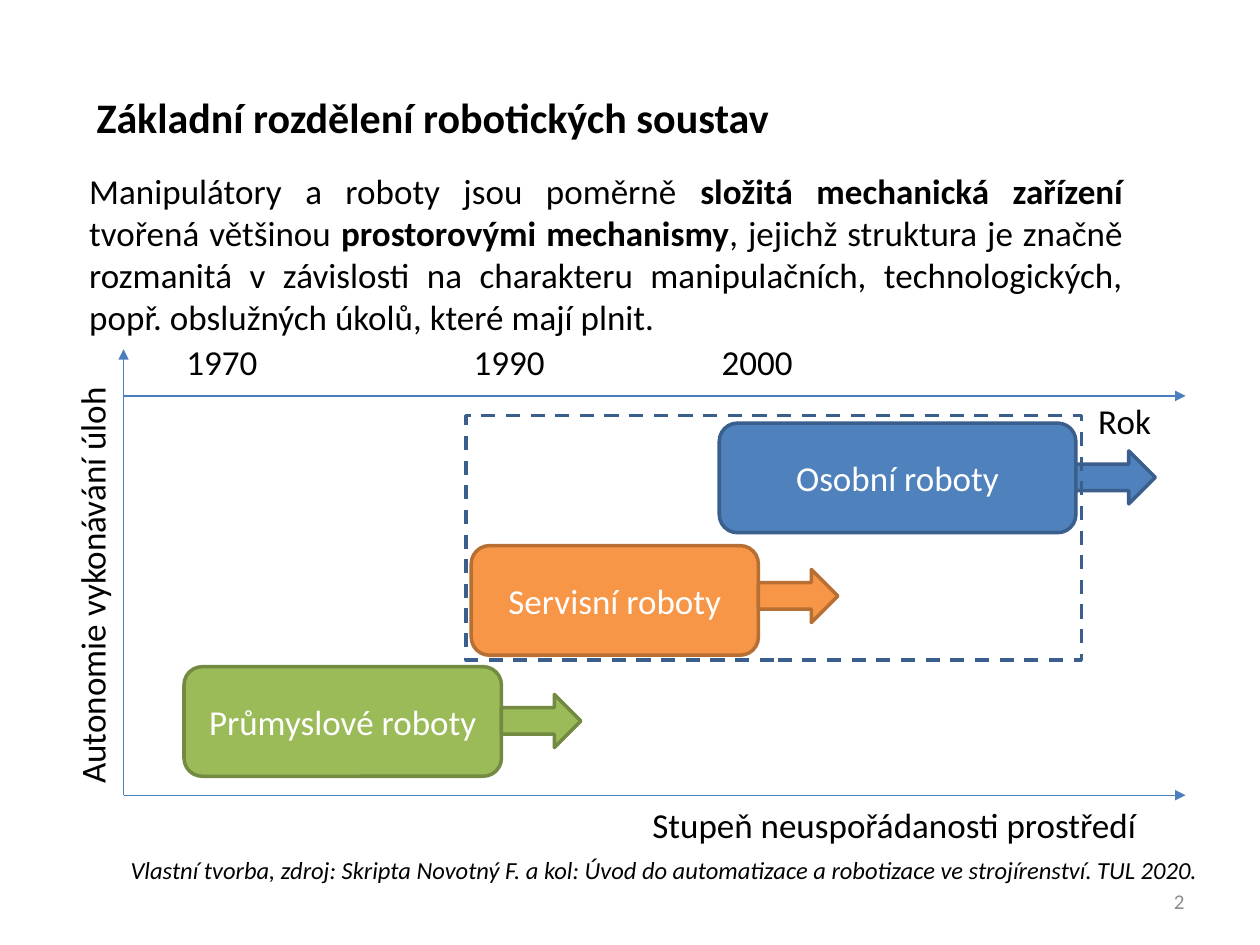
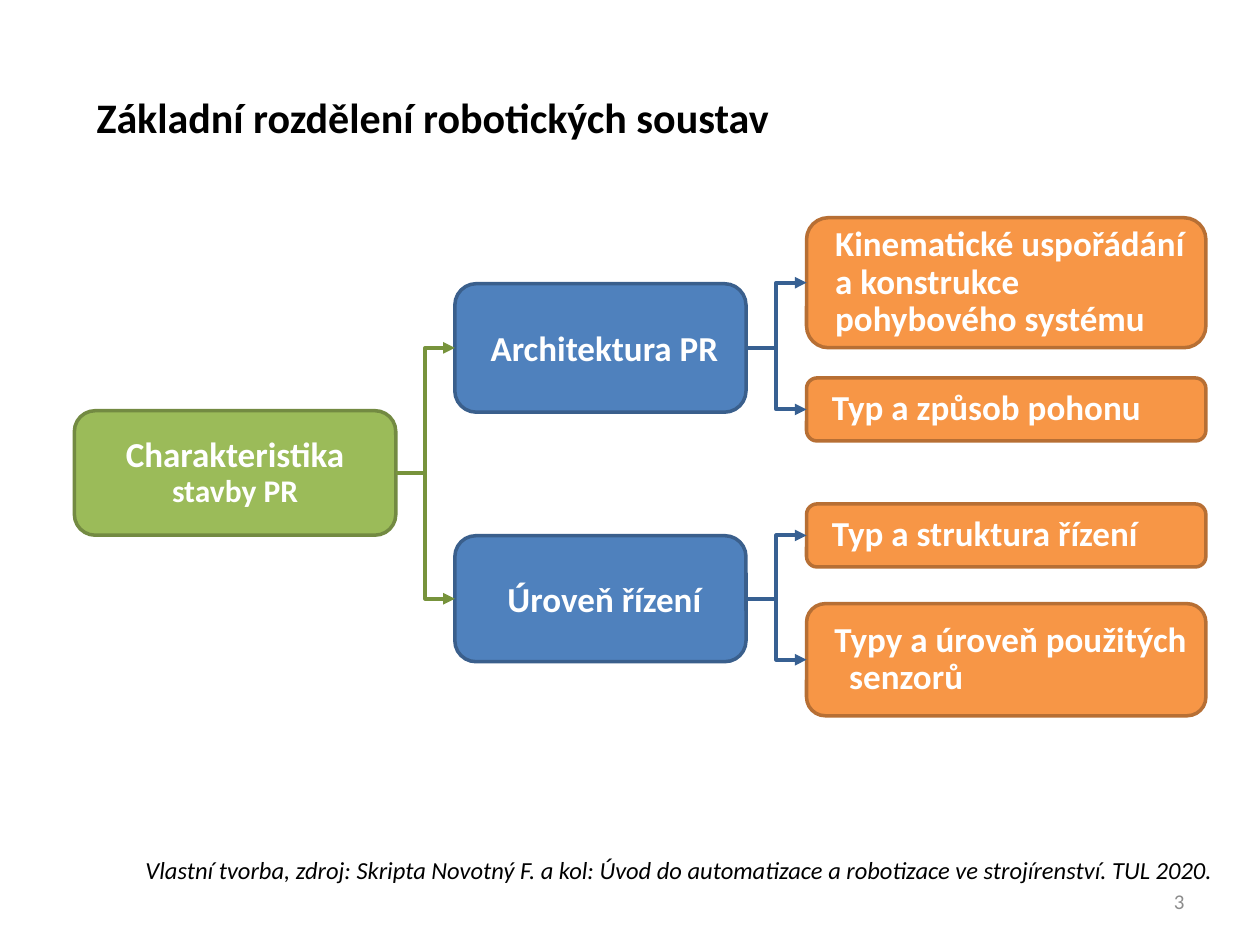
from lxml import etree
from pptx import Presentation
from pptx.dml.color import RGBColor
from pptx.enum.dml import MSO_LINE
from pptx.enum.shapes import MSO_CONNECTOR, MSO_SHAPE
from pptx.enum.text import MSO_ANCHOR, PP_ALIGN
from pptx.oxml.ns import qn
from pptx.util import Cm, Pt

LEFT, CENTER, RIGHT, JUSTIFY = PP_ALIGN.LEFT, PP_ALIGN.CENTER, PP_ALIGN.RIGHT, PP_ALIGN.JUSTIFY
TOP, MIDDLE = MSO_ANCHOR.TOP, MSO_ANCHOR.MIDDLE
RECT, ROUND_RECT = MSO_SHAPE.RECTANGLE, MSO_SHAPE.ROUNDED_RECTANGLE
RIGHT_ARROW = MSO_SHAPE.RIGHT_ARROW
STRAIGHT, ELBOW = MSO_CONNECTOR.STRAIGHT, MSO_CONNECTOR.ELBOW
DASH = MSO_LINE.DASH
LEFT_SIDE, RIGHT_SIDE = 1, 3

FONT = "Calibri"
BLACK, WHITE, GREY = "000000", "FFFFFF", "8C8C8C"
AXIS = "4B7EBC"
GREEN = ("9BBB59", "738A42")
ORANGE = ("F79646", "B76F34")
BLUE = ("4F81BD", "3A5F8C")
GREEN_LINK, BLUE_LINK = "77933C", "376092"

TITLE = "Základní rozdělení robotických soustav"
SOURCE = ("Vlastní tvorba, zdroj: Skripta Novotný F. a kol: Úvod do automatizace "
          "a robotizace ve strojírenství. TUL 2020.")


def rgb(color):
    return RGBColor.from_string(color)


def set_text(shape, runs, size=20, color=BLACK, bold=False, italic=False, align=LEFT,
             anchor=TOP, spacing=None, left=0, first=0):
    tf = shape.text_frame
    tf.word_wrap = True
    tf.vertical_anchor = anchor
    p = tf.paragraphs[0]
    p.alignment = align
    if spacing:
        p.line_spacing = spacing
    if left:
        pPr = p._p.get_or_add_pPr()
        pPr.set("marL", str(Cm(left)))
        pPr.set("indent", str(Cm(first)))
    if isinstance(runs, str):
        runs = [(runs, {})]
    for text, fmt in runs:
        r = p.add_run()
        r.text = text
        r.font.name = FONT
        r.font.size = Pt(fmt.get("size", size))
        r.font.bold = fmt.get("bold", bold)
        r.font.italic = italic
        r.font.color.rgb = rgb(color)


def add_label(s, runs, x, y, w, h=1.11, rotation=0, **fmt):
    sp = s.shapes.add_textbox(Cm(x), Cm(y), Cm(w), Cm(h))
    sp.rotation = rotation
    set_text(sp, runs, **fmt)


def add_figure(s, kind, x, y, w, h, fill, line):
    sp = s.shapes.add_shape(kind, Cm(x), Cm(y), Cm(w), Cm(h))
    sp.shadow.inherit = False
    if fill:
        sp.fill.solid()
        sp.fill.fore_color.rgb = rgb(fill)
    else:
        sp.fill.background()
    sp.line.color.rgb = rgb(line)
    sp.line.width = Pt(2)
    return sp


def add_box(s, runs, x, y, w, h, colors, **fmt):
    sp = add_figure(s, ROUND_RECT, x, y, w, h, *colors)
    set_text(sp, runs, color=WHITE, anchor=MIDDLE, **fmt)
    return sp


def add_arrow(s, kind, x1, y1, x2, y2, color, width):
    c = s.shapes.add_connector(kind, x1, y1, x2, y2)
    c.line.color.rgb = rgb(color)
    c.line.width = Pt(width)
    spPr = c._element.spPr
    etree.SubElement(spPr.find(qn("a:ln")), qn("a:tailEnd"), type="triangle")
    etree.SubElement(spPr, qn("a:effectLst"))
    return c


def add_axis(s, x1, y1, x2, y2):
    add_arrow(s, STRAIGHT, Cm(x1), Cm(y1), Cm(x2), Cm(y2), AXIS, 0.75)


def add_link(s, parent, child, color):
    c = add_arrow(s, ELBOW, 0, 0, 0, 0, color, 2.25)
    c.begin_connect(parent, RIGHT_SIDE)
    c.end_connect(child, LEFT_SIDE)


def add_slide(prs, number, source_x):
    s = prs.slides.add_slide(prs.slide_layouts[6])
    add_label(s, TITLE, 1.7, 1.73, 22.4, 1.27, size=24, bold=True)
    add_label(s, str(number), 18.21, 17.65, 5.92, 1.02, size=12, color=GREY,
              align=RIGHT, anchor=MIDDLE)
    add_label(s, SOURCE, source_x, 17.12, 24, 0.86, size=14, italic=True, align=RIGHT)
    return s


def build_timeline(prs):
    s = add_slide(prs, 2, 0.41)
    bold = {"bold": True}
    add_label(s, [
        ("Manipulátory a roboty jsou poměrně", {}),
        (" složitá mechanická zařízení ", bold),
        ("tvořená většinou ", {}),
        ("prostorovými mechanismy", bold),
        (", jejichž struktura je značně rozmanitá v závislosti na charakteru manipulačních, "
         "technologických, popř. obslužných úkolů, které mají plnit.", {}),
    ], 1.55, 3.3, 21.34, 3.68, align=JUSTIFY)

    left, right, bottom = 2.49, 23.9, 16.03
    add_axis(s, left, bottom, left, 7.04)
    for y in (bottom, 7.98):
        add_axis(s, left, y, right, y)
    add_label(s, "Stupeň neuspořádanosti prostředí", 12.9, 16.08, 11)
    add_label(s, "Autonomie vykonávání úloh", -2.49, 11.15, 8.69, rotation=270)
    add_label(s, "Rok", 21.89, 7.92, 3.4)

    generations = [
        ("1970", "Průmyslové roboty", 3.71, 13.44, 6.4, 14, GREEN),
        ("1990", "Servisní roboty", 9.5, 11, 5.79, 11.48, ORANGE),
        ("2000", "Osobní roboty", 14.5, 8.53, 7.19, 9.09, BLUE),
    ]
    for year, name, x, y, w, arrow_y, colors in generations:
        add_label(s, year, x - 0.2, 6.73, 3.4)
        add_box(s, name, x, y, w, 2.21, colors, align=CENTER)
        add_figure(s, RIGHT_ARROW, x + w, arrow_y, 1.6, 1.07, *colors)
    frame = add_figure(s, RECT, 9.4, 8.38, 12.4, 4.93, None, BLUE[1])
    frame.line.dash_style = DASH


def build_tree(prs):
    s = add_slide(prs, 3, 0.71)
    root = add_box(s, [("Charakteristika", {}), (" stavby PR", {"size": 18})],
                   1.5, 8.28, 6.48, 2.51, GREEN, bold=True, align=CENTER, spacing=0.9)
    branches = [
        (" Architektura PR", 5.72, 2.59, [
            ("Kinematické uspořádání a konstrukce pohybového systému", 4.39, 2.62, 0.2, 0),
            ("Typ a způsob pohonu", 7.62, 1.27, 0.2, 0),
        ]),
        (" Úroveň řízení", 10.8, 2.54, [
            ("Typ a struktura řízení", 10.16, 1.27, 0.2, 0),
            ("Typy a úroveň použitých senzorů", 12.17, 2.26, 0.5, -0.3),
        ]),
    ]
    for name, y, h, leaves in branches:
        branch = add_box(s, name, 9.17, y, 5.87, h, BLUE, bold=True, align=CENTER)
        add_link(s, root, branch, GREEN_LINK)
        for text, leaf_y, leaf_h, left, first in leaves:
            leaf = add_box(s, text, 16.26, leaf_y, 8.05, leaf_h, ORANGE, bold=True,
                           spacing=0.9, left=left, first=first)
            add_link(s, branch, leaf, BLUE_LINK)


def main():
    prs = Presentation()
    prs.slide_width, prs.slide_height = Cm(25.4), Cm(19.05)
    build_timeline(prs)
    build_tree(prs)
    prs.save("out.pptx")


if __name__ == "__main__":
    main()
